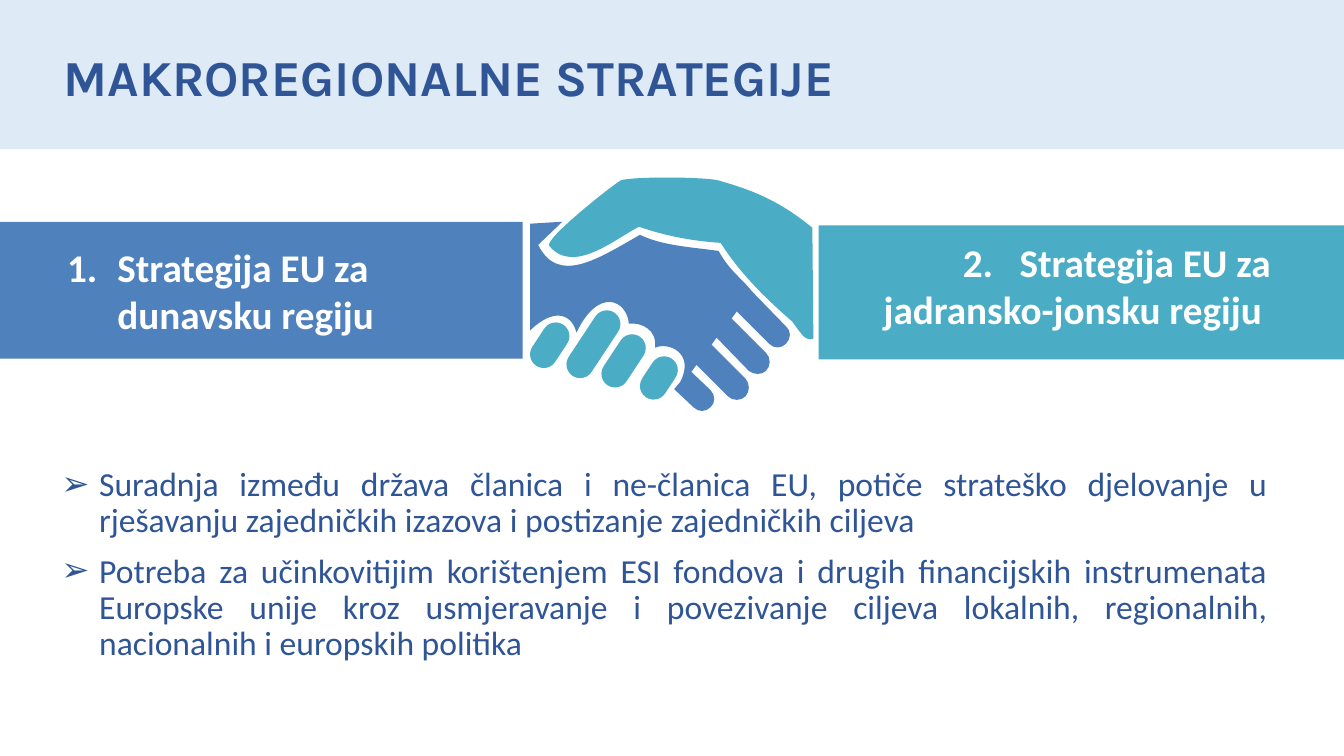
from lxml import etree
from pptx import Presentation
from pptx.dml.color import RGBColor
from pptx.enum.shapes import MSO_SHAPE
from pptx.enum.text import MSO_ANCHOR, PP_ALIGN
from pptx.oxml.ns import qn
from pptx.util import Cm, Pt

RECTANGLE = MSO_SHAPE.RECTANGLE
ROUNDED = MSO_SHAPE.ROUNDED_RECTANGLE
MIDDLE = MSO_ANCHOR.MIDDLE
LEFT, RIGHT, JUSTIFY = PP_ALIGN.LEFT, PP_ALIGN.RIGHT, PP_ALIGN.JUSTIFY
COLORS = {"banner": "DEEBF7", "navy": "2F5597", "blue": "4F81BD",
          "teal": "4BACC6", "white": "FFFFFF"}


def paint(shape, color):
    shape.shadow.inherit = False
    shape.fill.solid()
    shape.fill.fore_color.rgb = RGBColor.from_string(COLORS[color])
    shape.line.fill.background()


def format_paragraph(paragraph, size, color, font_name, bold, alignment):
    paragraph.alignment = alignment
    for run in paragraph.runs:
        run.font.size = Pt(size)
        run.font.name = font_name
        run.font.bold = bold
        run.font.color.rgb = RGBColor.from_string(COLORS[color])


presentation = Presentation()
presentation.slide_width = Cm(33.87)
presentation.slide_height = Cm(19.05)
slide = presentation.slides.add_slide(presentation.slide_layouts[5])

banner = slide.shapes.add_shape(RECTANGLE, 0, 0, presentation.slide_width, Cm(3.76))
paint(banner, "banner")
title = slide.shapes.title
banner._element.addnext(title._element)
title.left, title.top, title.width, title.height = Cm(1.35), Cm(0.67), Cm(31.17), Cm(2.69)
title.text_frame.text = "MAKROREGIONALNE STRATEGIJE"
title.text_frame.vertical_anchor = MIDDLE
title_paragraph = title.text_frame.paragraphs[0]
title_paragraph.line_spacing = 0.9
format_paragraph(title_paragraph, 36, "navy", "Karla", True, LEFT)

# Outline steps in hundredths of an inch: pairs are lines, sixes are Bézier curves
teal_hand = [
    (634, 225), (610, 237, 569, 273, 545, 244), (539, 238, 607, 184, 616, 179),
    (625, 175, 706, 175, 716, 180), (755, 191, 779, 204, 806, 226), (807, 336),
    (799, 338, 797, 334, 786, 319), (755, 292, 733, 269, 715, 241),
    (686, 239, 660, 234, 634, 225),
]
blue_hand = [
    (558, 220), (534, 243), (554, 283, 593, 257, 635, 233),
    (658, 244, 685, 245, 713, 249), (724, 269, 735, 275, 746, 289), (780, 324),
    (785, 328, 785, 336, 780, 341), (775, 346, 768, 346, 763, 341),
    (731, 309), (726, 316), (760, 350),
    (765, 355, 765, 363, 760, 368), (756, 372, 748, 372, 743, 368),
    (711, 335), (706, 342), (740, 376),
    (744, 381, 744, 388, 740, 393), (735, 398, 727, 398, 722, 393),
    (691, 362), (686, 369), (705, 387),
    (710, 392, 710, 400, 705, 404), (700, 409, 693, 409, 688, 404),
    (671, 388), (669, 386), (675, 379),
    (690, 350, 663, 339, 650, 345), (652, 327, 637, 320, 624, 321),
    (622, 298, 594, 284, 572, 330), (567, 310, 548, 306, 526, 328),
    (526, 222), (558, 220),
]
fingers = [(13.51, 8.08, 1.24), (14.61, 7.72, 1.91), (15.37, 8.36, 1.47), (16.26, 8.94, 1.17)]

handshake = slide.shapes.add_group_shape()
for outline, color in ((teal_hand, "teal"), (blue_hand, "blue")):
    corners = [step[-2:] for step in outline]
    left_edge = min(x for x, y in corners)
    top_edge = min(y for x, y in corners)
    builder = handshake.shapes.build_freeform(*corners[0], scale=Cm(2.54) / 100)
    builder.add_line_segments(corners[1:], close=True)
    hand = builder.convert_to_shape()
    paint(hand, color)
    segments = list(hand._element.iter(qn("a:lnTo")))
    for segment, step in zip(segments, outline[1:]):
        if len(step) == 6:
            curve = etree.Element(qn("a:cubicBezTo"))
            for x, y in zip(step[::2], step[1::2]):
                etree.SubElement(curve, qn("a:pt"), x=str(x - left_edge), y=str(y - top_edge))
            segment.getparent().replace(segment, curve)
    if color == "teal":
        for left, top, height in fingers:
            finger = handshake.shapes.add_shape(ROUNDED, Cm(left), Cm(top), Cm(0.69), Cm(height))
            finger.adjustments[0] = 0.5
            finger.rotation = 33.4
            paint(finger, color)

for left, top, width, height, color in ((0, 5.59, 13.17, 3.45, "blue"),
                                        (20.63, 5.68, 13.24, 3.38, "teal")):
    sleeve = slide.shapes.add_shape(RECTANGLE, Cm(left), Cm(top), Cm(width), Cm(height))
    paint(sleeve, color)

numbered = {"type": "arabicPeriod"}
text_blocks = [
    ((1.3, 11.66, 30.89, 6.17), [
        "Suradnja između država članica i ne-članica EU, potiče strateško djelovanje u "
        "rješavanju zajedničkih izazova i postizanje zajedničkih ciljeva",
        "Potreba za učinkovitijim korištenjem ESI fondova i drugih financijskih instrumenata "
        "Europske unije kroz usmjeravanje i povezivanje ciljeva lokalnih, regionalnih, "
        "nacionalnih i europskih politika",
    ], 24, "navy", False, JUSTIFY, 0.95, 0.9, 10, "a:buChar", {"char": "➢"}),
    ((1.44, 6.01, 10.34, 2.64), ["Strategija EU za dunavsku regiju"],
     28, "white", True, LEFT, 1.27, 1.0, 0, "a:buAutoNum", numbered),
    ((19.98, 5.89, 12.29, 2.64), ["Strategija EU za jadransko-jonsku regiju "],
     28, "white", True, RIGHT, 1.43, 1.0, 0, "a:buAutoNum", {**numbered, "startAt": "2"}),
]
for (box, texts, size, color, bold, alignment, indent,
     line_spacing, space_before, bullet_tag, bullet) in text_blocks:
    text_frame = slide.shapes.add_textbox(*map(Cm, box)).text_frame
    text_frame.word_wrap = True
    text_frame.text = "\n".join(texts)
    for paragraph in text_frame.paragraphs:
        format_paragraph(paragraph, size, color, "Calibri", bold, alignment)
        paragraph.line_spacing = line_spacing
        paragraph.space_before = Pt(space_before)
        properties = paragraph._p.get_or_add_pPr()
        properties.set("marL", str(Cm(indent)))
        properties.set("indent", str(-Cm(indent)))
        if bullet_tag == "a:buChar":
            etree.SubElement(properties, qn("a:buFont"), typeface="Calibri")
        etree.SubElement(properties, qn(bullet_tag), bullet)

presentation.save("out.pptx")
